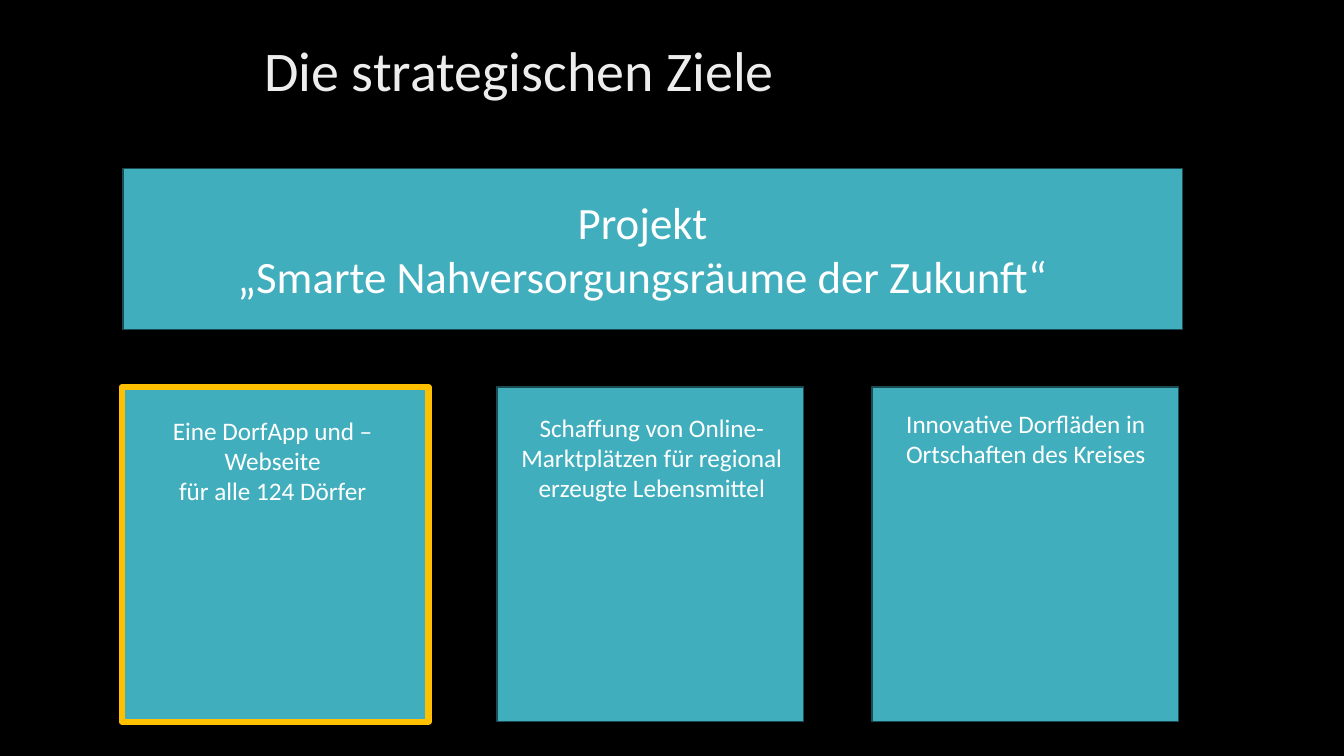
"""Build the slide on the strategic goals of the village project."""
from dataclasses import dataclass

from pptx import Presentation
from pptx import util as u
from pptx.dml.color import RGBColor
from pptx.enum import shapes, text

BLACK = RGBColor(0x00, 0x00, 0x00)
WHITE = RGBColor(0xFF, 0xFF, 0xFF)
SILVER = RGBColor(0xED, 0xED, 0xED)
TEAL = RGBColor(0x41, 0xAE, 0xBD)
DARK_TEAL = RGBColor(0x1C, 0x4C, 0x53)
AMBER = RGBColor(0xFF, 0xC0, 0x00)

WIDTH, HEIGHT = u.Inches(13.33), u.Inches(7.5)
CARD_LEFT, CARD_PITCH, CARD_TOP = 9.08, 27.9, 51.2
CARD_WIDTH, CARD_HEIGHT = 22.8, 44.27
CAPTION_WIDTH = 22.28


@dataclass(frozen=True)
class Box:
    """A rectangle in percent of the slide's width and height."""
    left: float
    top: float
    width: float
    height: float

    def emu(self) -> tuple[int, int, int, int]:
        """Return the rectangle in slide units."""
        return (int(WIDTH * self.left / 100), int(HEIGHT * self.top / 100),
                int(WIDTH * self.width / 100), int(HEIGHT * self.height / 100))


@dataclass(frozen=True)
class Goal:
    """A card with its caption, placed relative to the card's left edge."""
    lines: tuple[str, ...]
    indent: float
    top: float
    height: float
    line: RGBColor = DARK_TEAL
    weight: float = 1


GOALS = (
    Goal(("Eine DorfApp und –", "Webseite", "für alle 124 Dörfer"),
         0.07, 54.27, 17.47, AMBER, 4.5),
    Goal(("Schaffung von Online-Marktplätzen für regional erzeugte Lebensmittel",),
         0.38, 53.87, 13.47),
    Goal(("Innovative Dorfläden in Ortschaften des Kreises",),
         0.3, 53.33, 9.47),
)
BANNER_LINES = ("Projekt", "„Smarte Nahversorgungsräume der Zukunft“")


def apply(target, formats: dict) -> None:
    """Set attributes from a dict of format values."""
    for name, value in formats.items():
        setattr(target, name, value)


def write(tf, lines: tuple[str, ...], size: float, color: RGBColor, paragraph: dict) -> None:
    """Fill a text frame with one paragraph per line."""
    for i, line in enumerate(lines):
        p = tf.paragraphs[0] if i == 0 else tf.add_paragraph()
        apply(p, paragraph)
        r = p.add_run()
        r.text = line
        apply(r.font, {"name": "Calibri", "size": u.Pt(size)})
        r.font.color.rgb = color


def add_panel(s, box: Box, line: RGBColor, weight: float) -> None:
    """Draw a teal rectangle with an outline."""
    sp = s.shapes.add_shape(shapes.MSO_SHAPE.RECTANGLE, *box.emu())
    sp.shadow.inherit = False
    sp.fill.solid()
    sp.fill.fore_color.rgb = TEAL
    sp.line.color.rgb = line
    sp.line.width = u.Pt(weight)


def add_caption(s, box: Box, lines: tuple[str, ...], size: float) -> None:
    """Add a centred white text box."""
    tf = s.shapes.add_textbox(*box.emu()).text_frame
    apply(tf, {"word_wrap": True, "auto_size": text.MSO_AUTO_SIZE.SHAPE_TO_FIT_TEXT})
    write(tf, lines, size, WHITE, {"alignment": text.PP_ALIGN.CENTER})


def add_title(s, box: Box, title: str) -> None:
    """Move and format the title placeholder."""
    sp = s.shapes.title
    apply(sp, dict(zip(("left", "top", "width", "height"), box.emu())))
    apply(sp.text_frame, {"vertical_anchor": text.MSO_ANCHOR.MIDDLE, "word_wrap": True})
    write(sp.text_frame, (title,), 40, SILVER,
          {"alignment": text.PP_ALIGN.LEFT, "line_spacing": 0.9})


def main() -> None:
    """Create and save the presentation."""
    prs = Presentation()
    apply(prs, {"slide_width": WIDTH, "slide_height": HEIGHT})
    s = prs.slides.add_slide(prs.slide_layouts.get_by_name("Title Only"))
    s.background.fill.solid()
    s.background.fill.fore_color.rgb = BLACK
    add_title(s, Box(18.9, 0, 86.25, 19.33), "Die strategischen Ziele")
    for i, goal in enumerate(GOALS):
        left = CARD_LEFT + i * CARD_PITCH
        add_panel(s, Box(left, CARD_TOP, CARD_WIDTH, CARD_HEIGHT), goal.line, goal.weight)
        add_caption(s, Box(left + goal.indent, goal.top, CAPTION_WIDTH, goal.height),
                    goal.lines, 18)
    add_panel(s, Box(9.15, 22.27, 78.83, 21.33), DARK_TEAL, 1)
    add_caption(s, Box(12.3, 25.07, 71.03, 15.73), BANNER_LINES, 32)
    prs.save("out.pptx")


if __name__ == "__main__":
    main()
